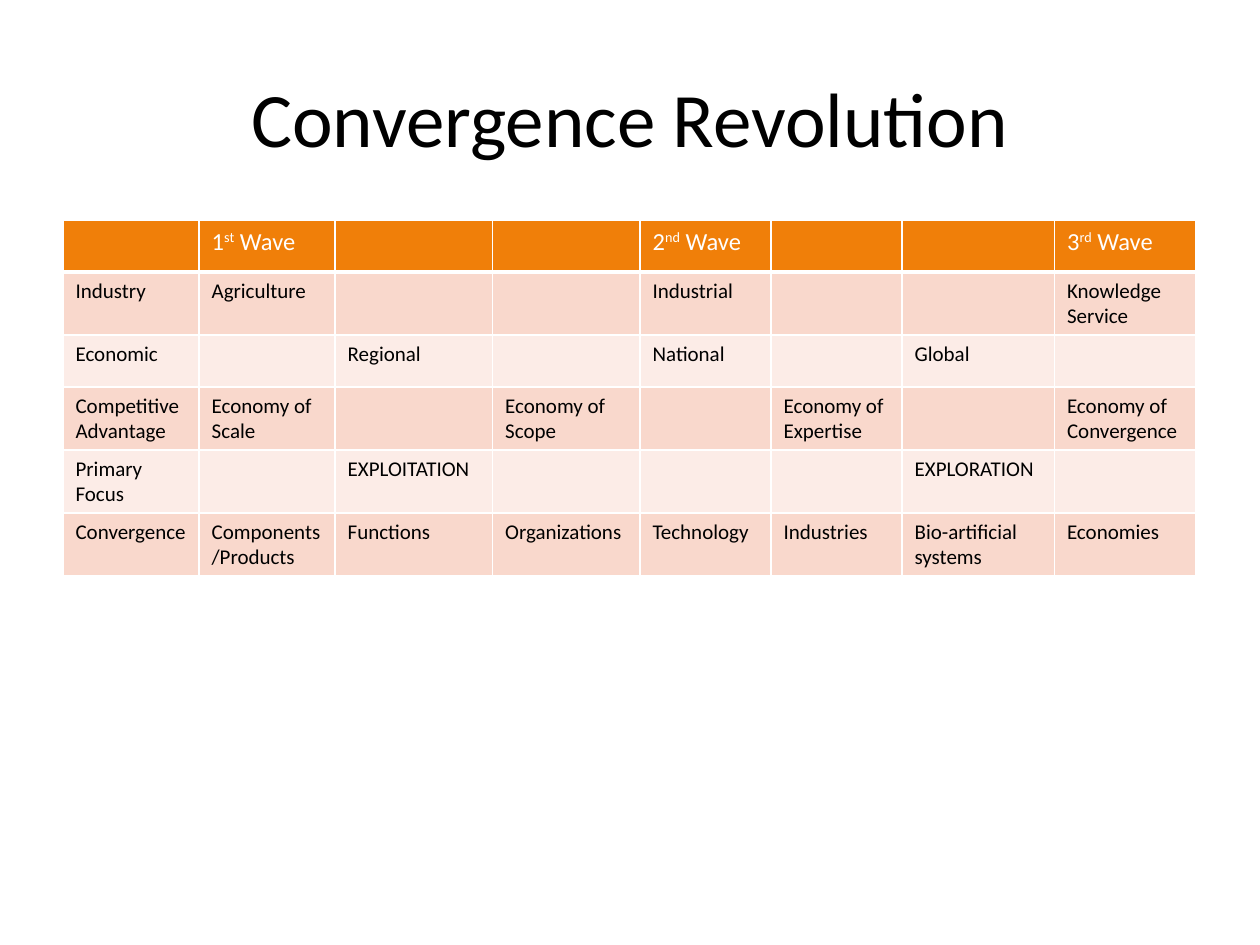
import pptx
import pptx.dml.color
import pptx.enum.text
import pptx.oxml
import pptx.oxml.ns
import pptx.util

TITLE = "Convergence Revolution"
WAVES = {1: ("1", "st"), 4: ("2", "nd"), 7: ("3", "rd")}
ROWS = [
    ["Industry", "Agriculture", "", "", "Industrial", "", "", "Knowledge Service"],
    ["Economic", "", "Regional", "", "National", "", "Global", ""],
    ["Competitive Advantage", "Economy of Scale", "", "Economy of Scope", "",
     "Economy of Expertise", "", "Economy of Convergence"],
    ["Primary Focus", "", "EXPLOITATION", "", "", "", "EXPLORATION", ""],
    ["Convergence", "Components/Products", "Functions", "Organizations",
     "Technology", "Industries", "Bio-artificial systems", "Economies"],
]
COLUMN_WIDTHS = [1.08, 1.08, 1.25, 1.17, 1.04, 1.04, 1.21, 1.12]
ROW_HEIGHT = 0.41
COLORS = {"text": "000000", "header": "F07F09", "white": "FFFFFF",
          "dark_band": "F9D8CC", "light_band": "FCECE7"}
FORMATS = {
    "title": ({"name": "Calibri", "size": pptx.util.Pt(44), "bold": False}, "text"),
    "header": ({"name": "Calibri", "size": pptx.util.Pt(14), "bold": False}, "white"),
    "body": ({"name": "Calibri", "size": pptx.util.Pt(12), "bold": False}, "text"),
}


def rgb(color):
    return pptx.dml.color.RGBColor.from_string(COLORS[color])


def add_span(para, text, style, raised=False):
    span = para.add_run()
    span.text = text
    values, color = FORMATS[style]
    for name, value in values.items():
        setattr(span.font, name, value)
    span.font.color.rgb = rgb(color)
    if raised:
        span._r.get_or_add_rPr().set("baseline", "30000")


def style_cell(cell, fill, bottom_width):
    properties = cell._tc.get_or_add_tcPr()
    for side, width in (("L", 1), ("R", 1), ("T", 1), ("B", bottom_width)):
        properties.append(pptx.oxml.parse_xml(
            f'<a:ln{side} {pptx.oxml.ns.nsdecls("a")} w="{pptx.util.Pt(width)}">'
            f'<a:solidFill><a:srgbClr val="{COLORS["white"]}"/></a:solidFill></a:ln{side}>'))
    cell.fill.solid()
    cell.fill.fore_color.rgb = rgb(fill)


def add_title(page):
    box = page.shapes.add_textbox(*map(pptx.util.Inches, (0.5, 0.3, 9, 1.25)))
    frame = box.text_frame
    frame.word_wrap = True
    frame.vertical_anchor = pptx.enum.text.MSO_ANCHOR.MIDDLE
    para = frame.paragraphs[0]
    para.alignment = pptx.enum.text.PP_ALIGN.CENTER
    add_span(para, TITLE, "title")


def add_wave_table(page):
    row_count = len(ROWS) + 1
    table = page.shapes.add_table(
        row_count, len(COLUMN_WIDTHS),
        *map(pptx.util.Inches, (0.5, 1.75, 9, ROW_HEIGHT * row_count))).table
    for column, width in zip(table.columns, COLUMN_WIDTHS):
        column.width = pptx.util.Inches(width)
    for row in table.rows:
        row.height = pptx.util.Inches(ROW_HEIGHT)

    for index in range(len(COLUMN_WIDTHS)):
        cell = table.cell(0, index)
        style_cell(cell, "header", 3)
        if index in WAVES:
            number, suffix = WAVES[index]
            para = cell.text_frame.paragraphs[0]
            add_span(para, number, "header")
            add_span(para, suffix, "header", raised=True)
            add_span(para, " Wave", "header")

    for row_index, texts in enumerate(ROWS, start=1):
        band = "dark_band" if row_index % 2 else "light_band"
        for index, text in enumerate(texts):
            cell = table.cell(row_index, index)
            style_cell(cell, band, 1)
            if text:
                add_span(cell.text_frame.paragraphs[0], text, "body")


def main():
    deck = pptx.Presentation()
    deck.slide_width = pptx.util.Inches(10)
    deck.slide_height = pptx.util.Inches(7.5)
    page = deck.slides.add_slide(deck.slide_layouts[6])
    add_title(page)
    add_wave_table(page)
    deck.save("out.pptx")


if __name__ == "__main__":
    main()
